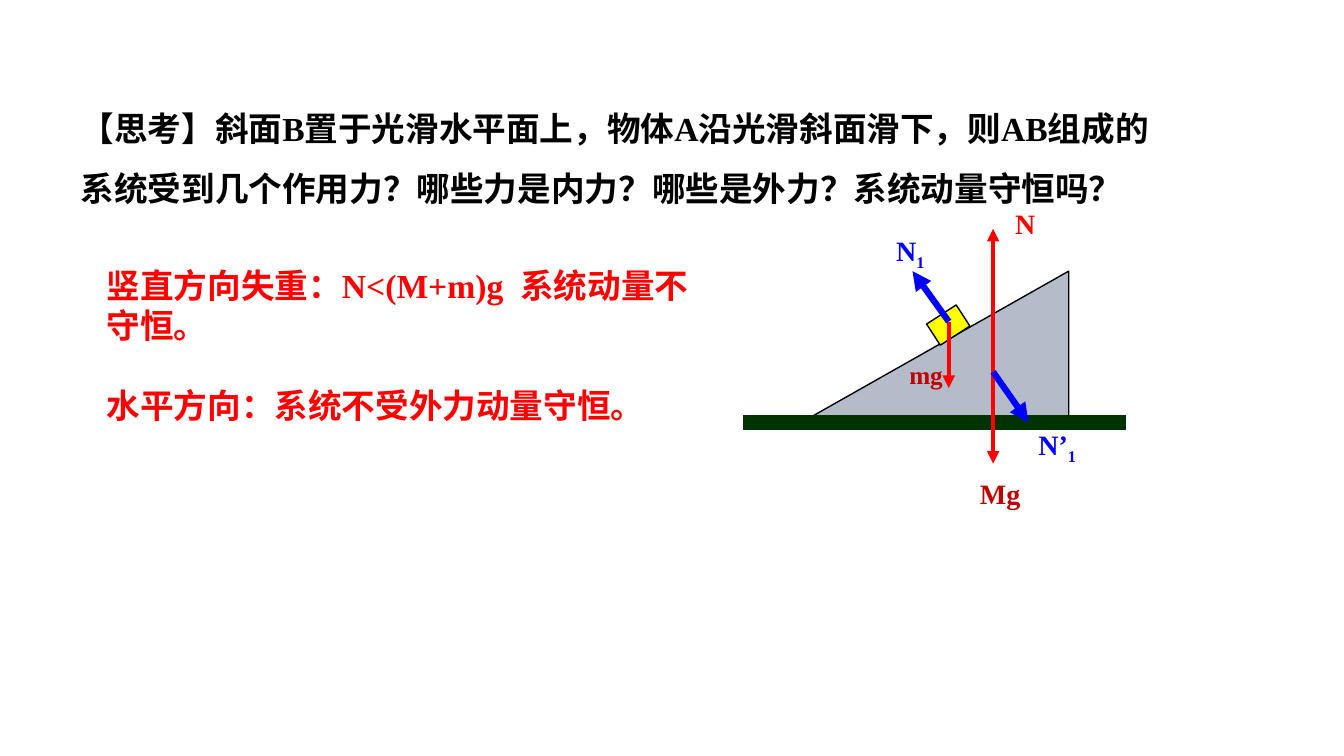
from lxml.etree import SubElement
from pptx import Presentation
from pptx.dml.color import RGBColor
from pptx.enum.shapes import MSO_CONNECTOR, MSO_SHAPE
from pptx.enum.text import MSO_ANCHOR, MSO_AUTO_SIZE, PP_ALIGN
from pptx.oxml.ns import qn
from pptx.util import Pt

PX = 9144
HUES = {
    "ink": "000000", "red": "FF0000", "dark": "C00000", "blue": "0000FF",
    "wedge": "B4BCCA", "block": "FFFF00", "floor": "003300",
}


class Board:
    """Draws styled elements on one slide, with lengths in px of 1/100 inch."""

    def __init__(self, slide, face):
        self.slide = slide
        self.face = face

    def hue(self, name):
        return RGBColor.from_string(HUES[name])

    def place(self, shape, box):
        shape.left, shape.top, shape.width, shape.height = [v * PX for v in box]

    def run(self, para, text, size, hue, sub=False):
        run = para.add_run()
        run.text = text
        font = run.font
        font.name, font.size, font.bold = self.face, Pt(size), True
        font.color.rgb = self.hue(hue)
        if sub:
            run._r.get_or_add_rPr().set("baseline", "-25000")

    def title(self, box, text, size, hue):
        shape = self.slide.shapes.title
        self.place(shape, box)
        frame = shape.text_frame
        frame.word_wrap = True
        frame.auto_size = MSO_AUTO_SIZE.NONE
        frame.vertical_anchor = MSO_ANCHOR.TOP
        para = frame.paragraphs[0]
        para.alignment = PP_ALIGN.LEFT
        para.line_spacing = 1.5
        self.run(para, text, size, hue)

    def text(self, box, lines, size, hue, gap=0):
        shape = self.slide.shapes.add_textbox(*[v * PX for v in box])
        frame = shape.text_frame
        frame.word_wrap = True
        for i, line in enumerate(lines):
            para = frame.add_paragraph() if i else frame.paragraphs[0]
            if i:
                para.space_before = Pt(gap)
            self.run(para, line, size, hue)
        return frame.paragraphs[0]

    def label(self, box, text, size, hue, sub=""):
        para = self.text(box, [text], size, hue)
        if sub:
            self.run(para, sub, size, hue, True)

    def shape(self, kind, box, fill, turn=0, flip=False):
        shape = self.slide.shapes.add_shape(kind, *[v * PX for v in box])
        shape.shadow.inherit = False
        shape.fill.solid()
        shape.fill.fore_color.rgb = self.hue(fill)
        shape.line.color.rgb = self.hue("ink")
        shape.line.width = Pt(1)
        shape.rotation = turn
        if flip:
            shape._element.spPr.xfrm.set("flipH", "1")

    def line(self, start, end, hue, width, arrow=True):
        ends = [v * PX for v in start + end]
        line = self.slide.shapes.add_connector(MSO_CONNECTOR.STRAIGHT, *ends)
        line.line.color.rgb = self.hue(hue)
        line.line.width = Pt(width)
        if arrow:
            SubElement(line.line._get_or_add_ln(), qn("a:tailEnd"), type="triangle")
        SubElement(line._element.spPr, qn("a:effectLst"))


def main():
    deck = Presentation()
    deck.slide_width, deck.slide_height = 1333 * PX, 750 * PX
    board = Board(deck.slides.add_slide(deck.slide_layouts[5]), "Times New Roman")

    board.title(
        (70, 82, 1094, 131),
        "【思考】斜面B置于光滑水平面上，物体A沿光滑斜面滑下，则AB组成的系统受到几个作用力？"
        "哪些力是内力？哪些是外力？系统动量守恒吗？",
        24, "ink",
    )

    mass, block = (985, 369), (941, 319)
    board.shape(MSO_SHAPE.RIGHT_TRIANGLE, (795, 269, 265, 150), "wedge", flip=True)
    board.line((737, 419), (1117, 419), "floor", 10.25, arrow=False)
    board.line(mass, (985, 227), "red", 3)
    board.line(mass, (985, 460), "red", 3)
    board.line(mass, (1020, 419), "blue", 4.5)
    board.shape(MSO_SHAPE.RECTANGLE, (923, 310, 35, 25), "block", turn=327.1)
    board.line(block, (941, 385), "red", 3)

    board.text(
        (96, 258, 606, 172),
        ["竖直方向失重：N<(M+m)g  系统动量不守恒。", "水平方向：系统不受外力动量守恒。"],
        24, "red", gap=28,
    )
    board.label((997, 200, 40, 44), "N", 20, "red")
    board.label((962, 468, 98, 44), "Mg", 20, "dark")
    board.label((892, 352, 65, 40), "mg", 18, "dark")
    board.line(block, (905, 269), "blue", 4.5)
    board.label((879, 227, 52, 44), "N", 20, "blue", sub="1")
    board.label((1020, 419, 69, 44), "N’", 20, "blue", sub="1")

    deck.save("out.pptx")


if __name__ == "__main__":
    main()
